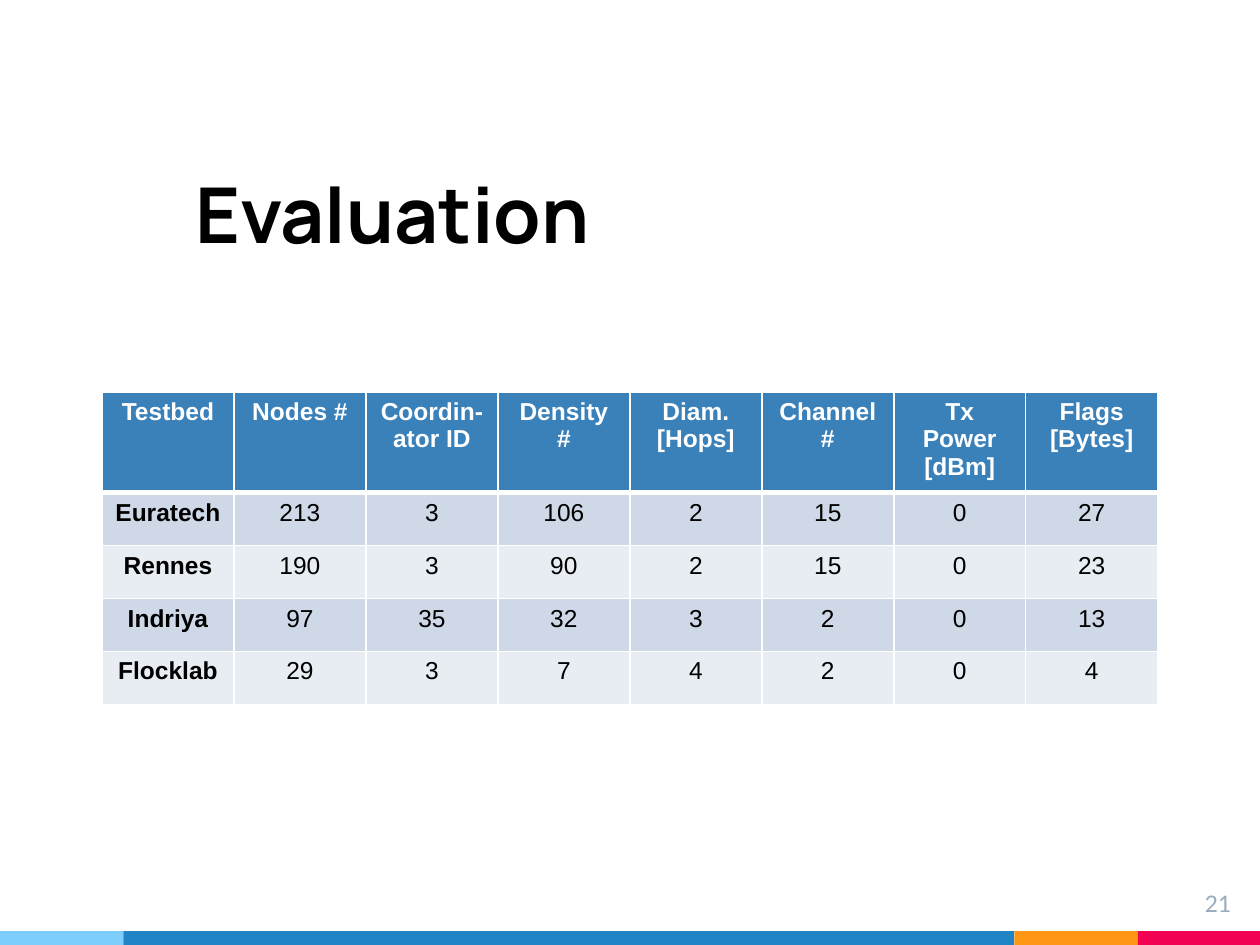
import pptx
import pptx.dml.color
import pptx.enum.shapes
import pptx.enum.text
import pptx.oxml
import pptx.oxml.ns
import pptx.util
from dataclasses import dataclass
from pptx.util import Inches

ALIGN = pptx.enum.text.PP_ALIGN


@dataclass(frozen=True)
class Theme:
    black: str = "000000"
    white: str = "FFFFFF"
    page_number: str = "97ABBC"
    header: str = "3A81BA"
    bands: tuple = ("CED8E7", "E8EDF3")
    light_blue: str = "7ECEFD"
    blue: str = "2185C5"
    orange: str = "FF9715"
    red: str = "F20253"
    title_font: str = "Manrope"
    table_font: str = "Arial"
    number_font: str = "Lato"
    title_size: int = 44
    table_size: int = 14
    number_size: int = 13


def rgb(color):
    return pptx.dml.color.RGBColor.from_string(color)


class SlideBuilder:
    def __init__(self, slide, theme):
        self.slide = slide
        self.theme = theme

    def set_text(self, frame, text, font, size, color, bold=False, align=ALIGN.LEFT):
        frame.text = text
        frame.word_wrap = True
        paragraph = frame.paragraphs[0]
        paragraph.alignment = align
        run_font = paragraph.runs[0].font
        run_font.name = font
        run_font.size = pptx.util.Pt(size)
        run_font.bold = bold
        run_font.color.rgb = rgb(color)

    def text(self, left, top, width, height, text, *style, **options):
        frame = self.slide.shapes.add_textbox(
            Inches(left), Inches(top), Inches(width), Inches(height)).text_frame
        frame.margin_left = frame.margin_right = Inches(0.1)
        frame.margin_top = frame.margin_bottom = Inches(0.1)
        frame.vertical_anchor = pptx.enum.text.MSO_ANCHOR.TOP
        self.set_text(frame, text, *style, **options)

    def bar(self, left, top, width, height, color):
        bar = self.slide.shapes.add_shape(
            pptx.enum.shapes.MSO_SHAPE.RECTANGLE,
            Inches(left), Inches(top), Inches(width), Inches(height))
        bar.shadow.inherit = False
        bar.fill.solid()
        bar.fill.fore_color.rgb = rgb(color)
        bar.line.fill.background()

    def borders(self, cell, bottom):
        """Draw white cell edges, 1 pt except for the given bottom width."""
        properties = cell._tc.get_or_add_tcPr()
        widths = {"lnL": 1, "lnR": 1, "lnT": 1, "lnB": bottom}
        for index, (edge, width) in enumerate(widths.items()):
            properties.insert(index, pptx.oxml.parse_xml(
                f'<a:{edge} {pptx.oxml.ns.nsdecls("a")} w="{int(pptx.util.Pt(width))}">'
                f'<a:solidFill><a:srgbClr val="{self.theme.white}"/></a:solidFill>'
                f'</a:{edge}>'))

    def table(self, left, top, width, row_height, rows):
        theme = self.theme
        table = self.slide.shapes.add_table(
            len(rows), len(rows[0]), Inches(left), Inches(top),
            Inches(width), Inches(row_height * len(rows))).table
        for r, values in enumerate(rows):
            is_header = r == 0
            fill = theme.header if is_header else theme.bands[(r - 1) % 2]
            for c, value in enumerate(values):
                cell = table.cell(r, c)
                self.set_text(cell.text_frame, str(value), theme.table_font,
                              theme.table_size,
                              theme.white if is_header else theme.black,
                              bold=is_header or c == 0, align=ALIGN.CENTER)
                cell.fill.solid()
                cell.fill.fore_color.rgb = rgb(fill)
                self.borders(cell, bottom=3 if is_header else 1)


TESTBEDS = [
    ("Testbed", "Nodes #", "Coordin-ator ID", "Density #",
     "Diam. [Hops]", "Channel #", "Tx Power [dBm]", "Flags [Bytes]"),
    ("Euratech", 213, 3, 106, 2, 15, 0, 27),
    ("Rennes", 190, 3, 90, 2, 15, 0, 23),
    ("Indriya", 97, 35, 32, 3, 2, 0, 13),
    ("Flocklab", 29, 3, 7, 4, 2, 0, 4),
]


def main():
    presentation = pptx.Presentation()
    presentation.slide_width = Inches(10)
    presentation.slide_height = Inches(7.5)
    theme = Theme()
    builder = SlideBuilder(
        presentation.slides.add_slide(presentation.slide_layouts[6]), theme)

    bar_left = 0
    for width, color in ((0.98, theme.light_blue), (7.07, theme.blue),
                         (0.98, theme.orange), (0.97, theme.red)):
        builder.bar(bar_left, 7.39, width, 0.11, color)
        bar_left += width

    builder.text(9.27, 6.96, 0.6, 0.46, "21", theme.number_font,
                 theme.number_size, theme.page_number, align=ALIGN.RIGHT)
    builder.text(1.45, 1.22, 5, 0.76, "Evaluation", theme.title_font,
                 theme.title_size, theme.black, bold=True)
    builder.table(0.81, 3.11, 8.38, 0.42, TESTBEDS)

    presentation.save("out.pptx")


if __name__ == "__main__":
    main()
